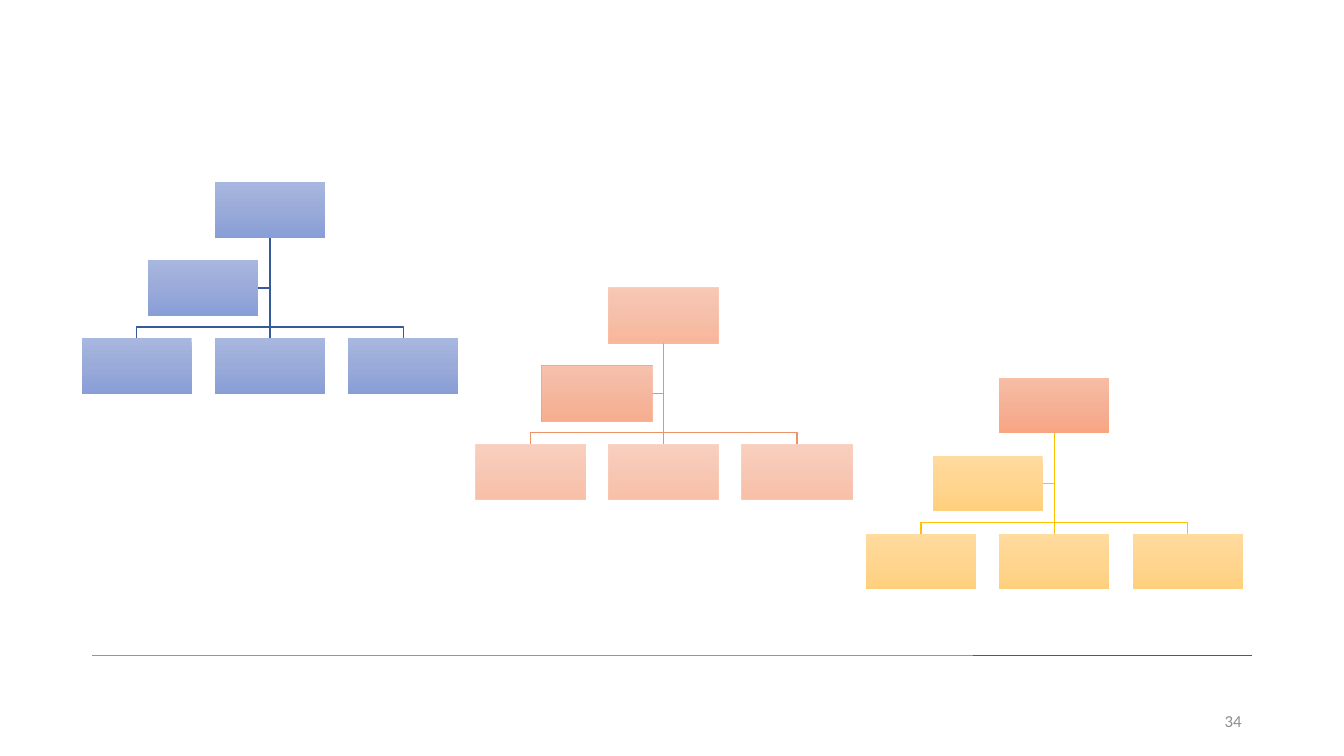
from lxml import etree
from pptx import Presentation
from pptx.dml.color import RGBColor
from pptx.enum.shapes import MSO_CONNECTOR, MSO_SHAPE
from pptx.enum.text import MSO_ANCHOR, PP_ALIGN
from pptx.oxml.ns import qn
from pptx.util import Pt

STRAIGHT = MSO_CONNECTOR.STRAIGHT
RECTANGLE = MSO_SHAPE.RECTANGLE
MIDDLE = MSO_ANCHOR.MIDDLE
RIGHT = PP_ALIGN.RIGHT
BLANK_LAYOUT = 6

BOX_WIDTH, BOX_HEIGHT = 78.75, 39.5
COLUMN_STEP, ROW_STEP = 95.25, 55.75
BAR_GAP = 8.25

BLUE = ["A8B7DF", "9AABD9", "889ED7"]
ORANGE = ["F7BDA5", "F5B196", "F8A582"]
YELLOW = ["FFDB9E", "FFD590", "FFD07C"]


def color(value):
    return RGBColor.from_string(value)


def fill_gradient(shape, colors, opacity):
    shape.fill.gradient()
    shape.fill.gradient_angle = 270
    stops = shape._element.spPr.find(qn("a:gradFill")).find(qn("a:gsLst"))
    stops.clear()
    for position, value in zip((0, 50, 100), colors):
        stop = etree.SubElement(stops, qn("a:gs"), pos=str(position * 1000))
        tint = etree.SubElement(stop, qn("a:srgbClr"), val=value)
        if opacity < 100:
            etree.SubElement(tint, qn("a:alpha"), val=str(opacity * 1000))


def add_line(page, start, end, value):
    line = page.shapes.add_connector(STRAIGHT, *map(Pt, start + end))
    line.line.color.rgb = color(value)
    line.line.width = Pt(1)
    etree.SubElement(line._element.spPr, qn("a:effectLst"))


def add_bent_line(page, points, value):
    corners = [(Pt(x), Pt(y)) for x, y in points]
    builder = page.shapes.build_freeform(*corners[0])
    builder.add_line_segments(corners[1:], close=False)
    line = builder.convert_to_shape()
    line.fill.background()
    line.line.color.rgb = color(value)
    line.line.width = Pt(1)
    line.shadow.inherit = False


def add_box(page, left, top, colors, opacity):
    box = page.shapes.add_shape(
        RECTANGLE, Pt(left), Pt(top), Pt(BOX_WIDTH), Pt(BOX_HEIGHT))
    fill_gradient(box, colors, opacity)
    box.line.fill.background()
    box.shadow.inherit = False


def add_organization(page, left, top, line_color, head, assistant, team):
    trunk = left + COLUMN_STEP + BOX_WIDTH / 2
    head_bottom = top + BOX_HEIGHT
    team_top = top + 2 * ROW_STEP
    assistant_left = left + COLUMN_STEP / 2
    assistant_top = top + ROW_STEP
    assistant_middle = assistant_top + BOX_HEIGHT / 2
    bar = team_top - BAR_GAP

    add_bent_line(page, [(trunk, head_bottom), (trunk, assistant_middle),
                         (assistant_left + BOX_WIDTH, assistant_middle)], line_color)
    for side in (trunk + COLUMN_STEP, trunk - COLUMN_STEP):
        add_bent_line(page, [(trunk, head_bottom), (trunk, bar),
                             (side, bar), (side, team_top)], line_color)
    add_line(page, (trunk, head_bottom), (trunk, team_top), line_color)

    add_box(page, left + COLUMN_STEP, top, *head)
    for column in range(3):
        add_box(page, left + column * COLUMN_STEP, team_top, *team)
    add_box(page, assistant_left, assistant_top, *assistant)


def add_footer(page, left, top, width):
    split = left + 629
    add_line(page, (left, top), (split, top), "ED7D31")
    add_line(page, (split, top), (left + width, top), "0070C0")

    number = page.shapes.add_textbox(Pt(left + 798), Pt(top + 32.5), Pt(30), Pt(28.75))
    frame = number.text_frame
    frame.word_wrap = True
    frame.vertical_anchor = MIDDLE
    para = frame.paragraphs[0]
    para.text = "34"
    para.alignment = RIGHT
    para.font.name = "Calibri"
    para.font.size = Pt(12)
    para.font.color.rgb = color("8C8C8C")


def main():
    deck = Presentation()
    deck.slide_width, deck.slide_height = Pt(960), Pt(540)
    page = deck.slides.add_slide(deck.slide_layouts[BLANK_LAYOUT])
    add_footer(page, 66, 468, 828)
    add_organization(page, 58.25, 130.25, "365B9D",
                     (BLUE, 100), (BLUE, 100), (BLUE, 100))
    add_organization(page, 339.5, 205.75, "EF9166",
                     (ORANGE, 80), (ORANGE, 90), (ORANGE, 70))
    add_organization(page, 618.5, 270, "FFC000",
                     (ORANGE, 100), (YELLOW, 100), (YELLOW, 100))
    deck.save("out.pptx")


if __name__ == "__main__":
    main()
